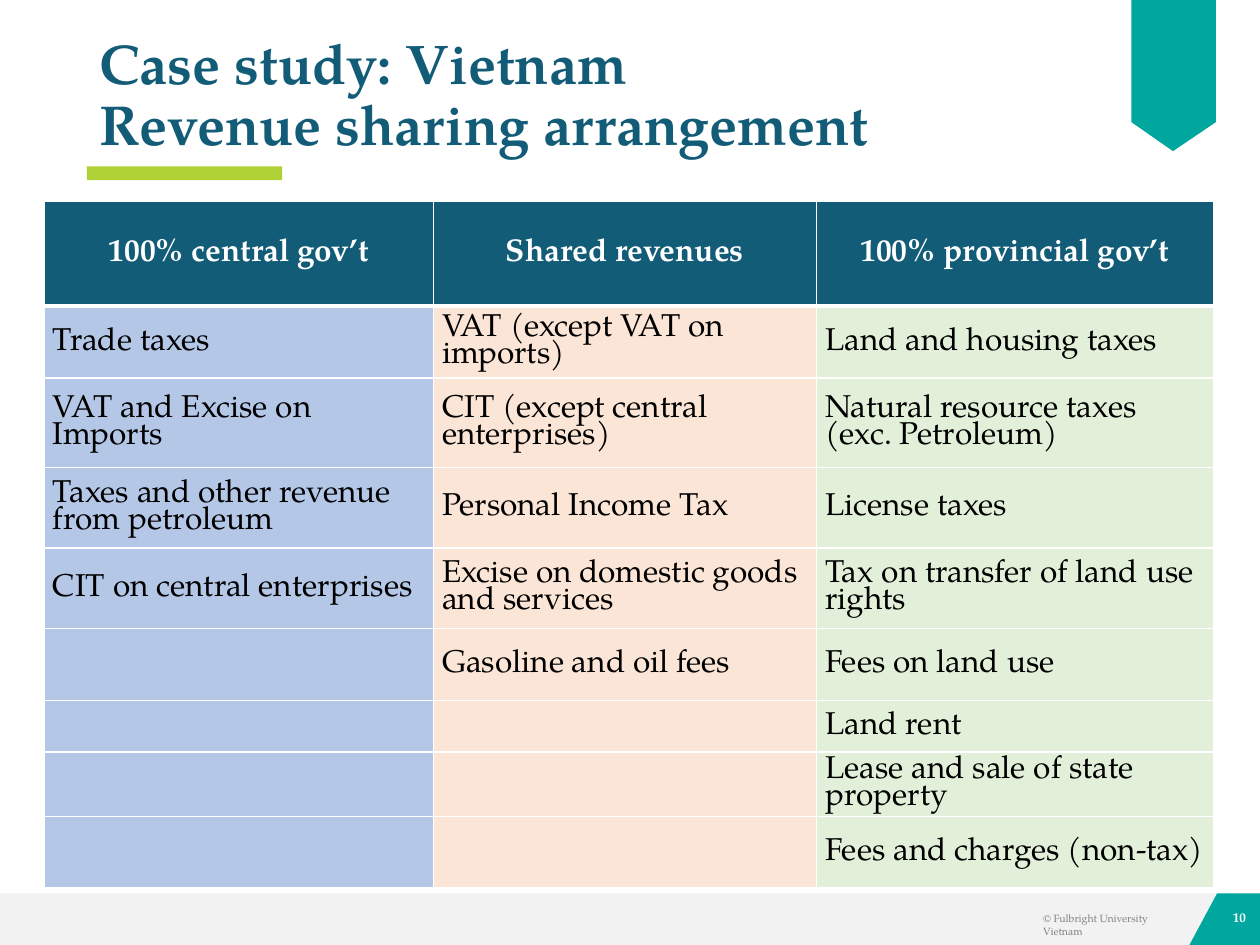
from lxml import etree
from pptx import Presentation
from pptx.dml.color import RGBColor
from pptx.enum.shapes import MSO_SHAPE
from pptx.enum.text import MSO_ANCHOR, MSO_AUTO_SIZE, PP_ALIGN
from pptx.oxml.ns import qn
from pptx.util import Inches, Pt

FONT = "TeX Gyre Pagella"
COLORS = {
    "navy": "125C78", "teal": "00A79F", "lime": "B0D136",
    "band": "F2F2F2", "gray": "808080", "white": "FFFFFF", "black": "000000",
    "blue": "B4C7E7", "peach": "FBE5D6", "green": "E2F0D9",
}


def format_text(paragraph, size, color, bold=False):
    values = {"name": FONT, "size": Pt(size), "bold": bold}
    for attribute, value in values.items():
        setattr(paragraph.font, attribute, value)
    paragraph.font.color.rgb = RGBColor.from_string(COLORS[color])


def paint(shape, color):
    """Give a plain fill with no outline and no shadow."""
    shape.shadow.inherit = False
    shape.fill.solid()
    shape.fill.fore_color.rgb = RGBColor.from_string(COLORS[color])
    shape.line.fill.background()


prs = Presentation()
prs.slide_width, prs.slide_height = Inches(10), Inches(7.5)
slide = prs.slides.add_slide(prs.slide_layouts[5])
shapes = slide.shapes

# Footer band and title accent
bars = [((0, 7.09, 10, 0.41), "band"), ((0.69, 1.32, 1.55, 0.11), "lime")]
for box, color in bars:
    bar = shapes.add_shape(MSO_SHAPE.RECTANGLE, *map(Inches, box))
    paint(bar, color)

# Page number corner and top ribbon
corner = [(9.66, 7.09), (10, 7.09), (10, 7.5), (9.44, 7.5)]
ribbon = [(8.98, 0), (9.65, 0), (9.65, 0.97), (9.31, 1.2), (8.98, 0.97)]
for points in (corner, ribbon):
    start, *rest = [(Inches(x), Inches(y)) for x, y in points]
    builder = shapes.build_freeform(*start)
    builder.add_line_segments(rest)
    paint(builder.convert_to_shape(), "teal")

# Footer texts
footers = [
    ("© Fulbright University Vietnam", (8.28, 7.24, 1.16, 0.2), 6, "gray", False, PP_ALIGN.LEFT),
    ("10", (9.63, 7.22, 0.26, 0.13), 7.5, "white", True, PP_ALIGN.RIGHT),
]
for text, box, size, color, bold, align in footers:
    frame = shapes.add_textbox(*map(Inches, box)).text_frame
    frame.word_wrap = True
    for side in ("left", "top", "right", "bottom"):
        setattr(frame, f"margin_{side}", 0)
    paragraph = frame.paragraphs[0]
    paragraph.text = text
    paragraph.alignment = align
    format_text(paragraph, size, color, bold)

# Title
title = shapes.title
title_box = {"left": 0.69, "top": 0, "width": 8.62, "height": 1.3}
for attribute, value in title_box.items():
    setattr(title, attribute, Inches(value))
frame = title.text_frame
frame.word_wrap = True
frame.auto_size = MSO_AUTO_SIZE.NONE
frame.vertical_anchor = MSO_ANCHOR.BOTTOM
heading = frame.paragraphs[0]
heading.add_run().text = "Case study: Vietnam"
heading.add_line_break()
heading.add_run().text = "Revenue sharing arrangement"
heading.alignment = PP_ALIGN.LEFT
heading.line_spacing = 0.9
format_text(heading, 32, "navy", True)

# Revenue table, one entry per column
revenues = [
    ("100% central gov’t", "blue", 3.09, [
        "Trade taxes", "VAT and Excise on Imports",
        "Taxes and other revenue from petroleum", "CIT on central enterprises",
    ]),
    ("Shared revenues", "peach", 3.04, [
        "VAT (except VAT on imports)", "CIT (except central enterprises)",
        "Personal Income Tax", "Excise on domestic goods and services",
        "Gasoline and oil fees",
    ]),
    ("100% provincial gov’t", "green", 3.15, [
        "Land and housing taxes", "Natural resource taxes (exc. Petroleum)",
        "License taxes", "Tax on transfer of land use rights",
        "Fees on land use", "Land rent", "Lease and sale of state property",
        "Fees and charges (non-tax)",
    ]),
]
row_heights = [0.83, 0.57, 0.71, 0.64, 0.64, 0.57, 0.41, 0.32, 0.57]
cell_format = {
    "vertical_anchor": MSO_ANCHOR.MIDDLE,
    "margin_left": Inches(0.07), "margin_right": Inches(0.07),
    "margin_top": 0, "margin_bottom": 0,
}
table = shapes.add_table(
    len(row_heights), len(revenues),
    Inches(0.35), Inches(1.6), Inches(9.28), Inches(sum(row_heights)),
).table
for row, height in zip(table.rows, row_heights):
    row.height = Inches(height)

for c, (header, column_color, width, sources) in enumerate(revenues):
    table.columns[c].width = Inches(width)
    for r in range(len(row_heights)):
        is_header = r == 0
        cell = table.cell(r, c)
        for attribute, value in cell_format.items():
            setattr(cell, attribute, value)
        paragraph = cell.text_frame.paragraphs[0]
        if is_header:
            paragraph.text = header
        elif r <= len(sources):
            paragraph.text = sources[r - 1]
        paragraph.alignment = PP_ALIGN.CENTER if is_header else PP_ALIGN.LEFT
        paragraph.line_spacing = 0.85
        format_text(paragraph, 18, "white" if is_header else "black", is_header)

        # Borders come before the fill in the cell properties
        borders = {"a:lnL": 1, "a:lnR": 1, "a:lnT": 3 if r == 1 else 1,
                   "a:lnB": 3 if is_header else 1}
        properties = cell._tc.get_or_add_tcPr()
        for tag, points in borders.items():
            line = etree.SubElement(properties, qn(tag), w=str(Pt(points)))
            fill = etree.SubElement(line, qn("a:solidFill"))
            etree.SubElement(fill, qn("a:srgbClr"), val=COLORS["white"])
        cell.fill.solid()
        cell.fill.fore_color.rgb = RGBColor.from_string(
            COLORS["navy" if is_header else column_color])

prs.save("out.pptx")
